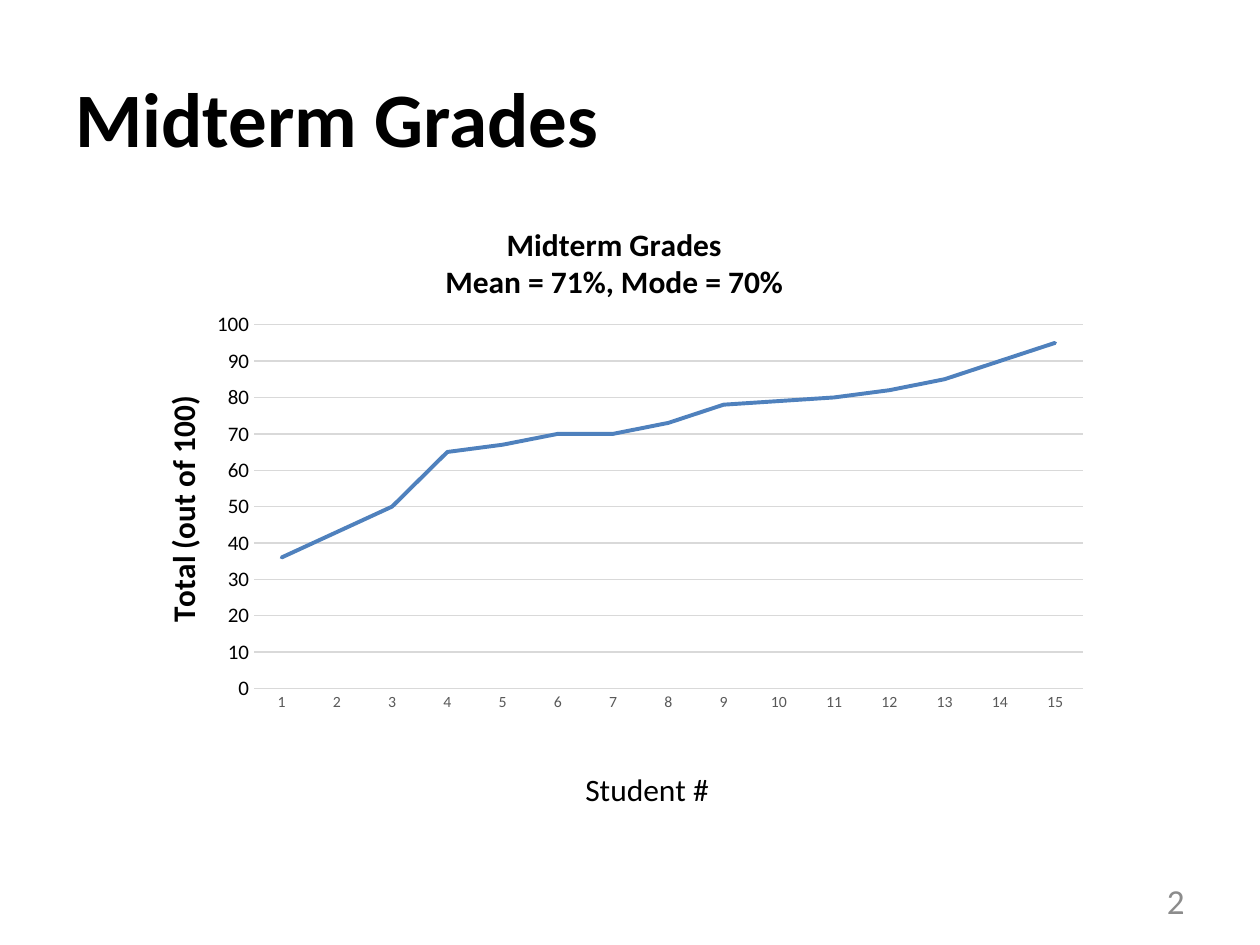
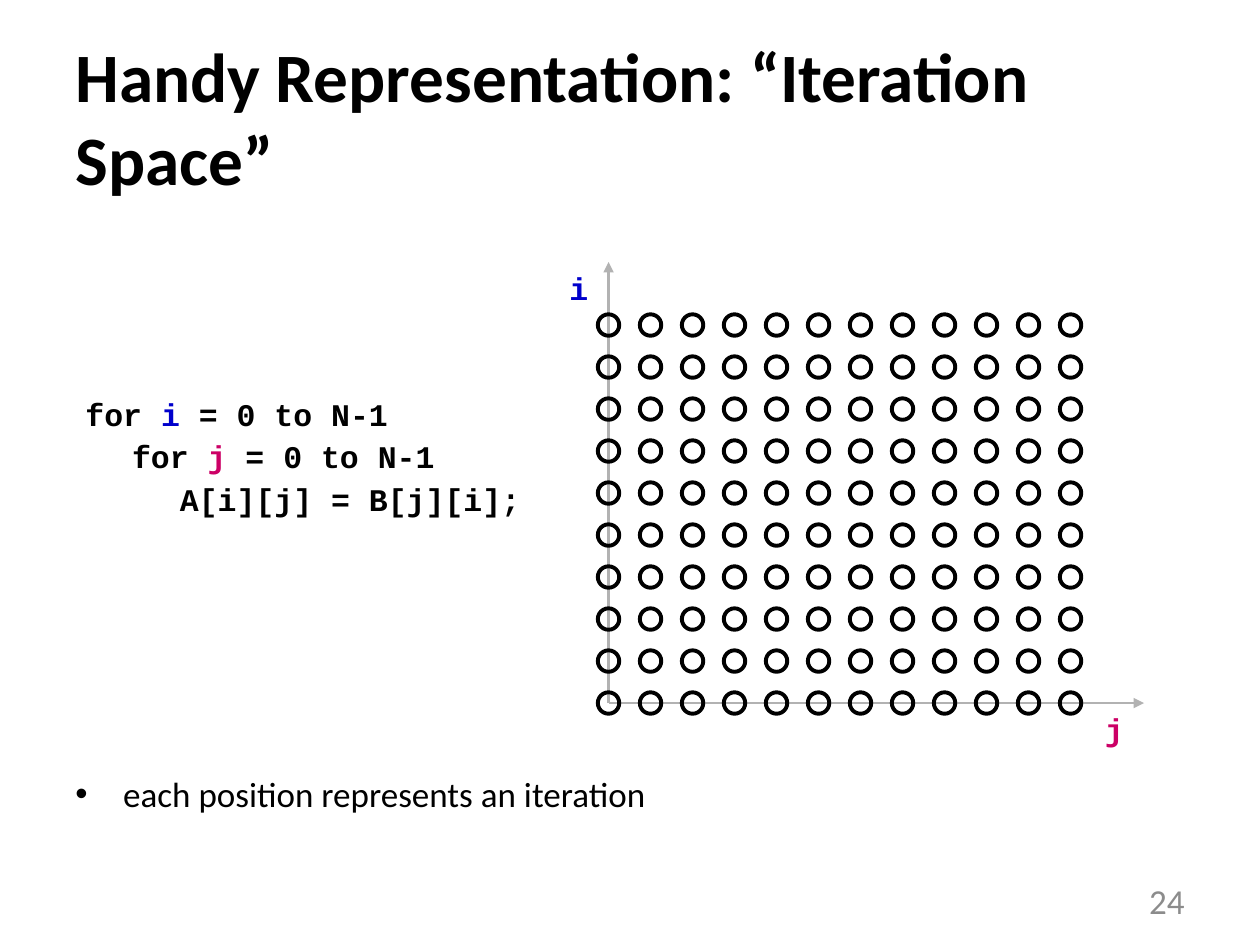
from typing import Any, NamedTuple

from lxml import etree
from pptx import Presentation
from pptx.chart.data import CategoryChartData
from pptx.dml.color import RGBColor
from pptx.enum.chart import XL_CHART_TYPE, XL_TICK_MARK
from pptx.enum.shapes import MSO_CONNECTOR, MSO_SHAPE
from pptx.enum.text import MSO_ANCHOR, PP_ALIGN
from pptx.oxml.ns import qn
from pptx.util import Inches, Pt

LINE_CHART = XL_CHART_TYPE.LINE
NO_TICK = XL_TICK_MARK.NONE
STRAIGHT = MSO_CONNECTOR.STRAIGHT
CIRCLE = MSO_SHAPE.OVAL
TOP, MIDDLE = MSO_ANCHOR.TOP, MSO_ANCHOR.MIDDLE
LEFT, RIGHT = PP_ALIGN.LEFT, PP_ALIGN.RIGHT

BODY_FONT, CODE_FONT = "Calibri", "Courier New"
BLACK, GRAY, TICK_GRAY = "000000", "8C8C8C", "595959"
GRID_GRAY, AXIS_GRAY = "D9D9D9", "B2B2B2"
I_BLUE, J_PINK, SERIES_BLUE = "0000CC", "CC0066", "4F81BD"

GRADES = (36, 43, 50, 65, 67, 70, 70, 73, 78, 79, 80, 82, 85, 90, 95)

# Iteration space: origin, pitch and size of the grid of circles
ORIGIN_X, ORIGIN_Y = 4.83, 5.58
STEP = 1 / 3
COLUMNS, ROWS = 12, 10
DIAMETER = 0.17


class Box(NamedTuple):
    left: float
    top: float
    width: float
    height: float

    def lengths(self) -> list[int]:
        return [Inches(value) for value in self]


class Style(NamedTuple):
    size: float
    color: str = BLACK
    bold: bool = False
    name: str = BODY_FONT


class Span(NamedTuple):
    text: str
    style: Style


class Para(NamedTuple):
    spans: list[Span]
    indent: float = 0
    align: Any = LEFT
    line_spacing: float = 1.0
    before: int = 0  # percent of the line
    bullet: str = ""


class AxisLook(NamedTuple):
    axis: Any
    title: str
    title_style: Style
    tick_style: Style
    place: tuple[float, float]


TITLE_BOX = Box(0.5, 0.3, 9, 1.25)
NUMBER_BOX = Box(7.17, 6.95, 2.33, 0.4)
NUMBER = Style(20, GRAY)
CODE = Style(18, BLACK, True, CODE_FONT)
CODE_I = CODE._replace(color=I_BLUE)
CODE_J = CODE._replace(color=J_PINK)
CHART_TITLE = Style(18, BLACK, True)


def rgb(color: str) -> RGBColor:
    return RGBColor.from_string(color)


def set_values(target: Any, values: dict[str, Any]) -> None:
    for name, value in values.items():
        setattr(target, name, value)


def set_font(font: Any, style: Style) -> None:
    set_values(font, {"size": Pt(style.size), "bold": style.bold, "name": style.name})
    font.color.rgb = rgb(style.color)


def set_line(line: Any, color: str, width: float) -> None:
    line.color.rgb = rgb(color)
    line.width = Pt(width)


def add_spans(paragraph: Any, spans: list[Span]) -> None:
    for span in spans:
        run = paragraph.add_run()
        run.text = span.text
        set_font(run.font, span.style)


def add_text(shapes: Any, box: Box, paras: list[Para], anchor: Any = TOP) -> None:
    frame = shapes.add_textbox(*box.lengths()).text_frame
    set_values(frame, {"word_wrap": True, "vertical_anchor": anchor})
    for index, para in enumerate(paras):
        paragraph = frame.add_paragraph() if index else frame.paragraphs[0]
        set_values(paragraph, {"alignment": para.align, "line_spacing": para.line_spacing})
        add_spans(paragraph, para.spans)
        properties = paragraph._p.get_or_add_pPr()
        properties.set("marL", str(Inches(para.indent)))
        before = etree.SubElement(properties, qn("a:spcBef"))
        etree.SubElement(before, qn("a:spcPct"), val=str(para.before * 1000))
        if para.bullet:
            properties.set("indent", str(-Inches(para.indent)))
            etree.SubElement(properties, qn("a:buFont"), typeface="Arial")
            etree.SubElement(properties, qn("a:buChar"), char=para.bullet)


def code_line(spans: list[Span], indent: float = 0) -> Para:
    return Para(spans, indent, line_spacing=0.7, before=50)


def add_page(deck: Any, title: str, title_size: float, number: str) -> Any:
    """Blank page with the shared title and page number."""
    page = deck.slides.add_slide(deck.slide_layouts[6])
    add_text(page.shapes, TITLE_BOX,
             [Para([Span(title, Style(title_size, bold=True))])], MIDDLE)
    add_text(page.shapes, NUMBER_BOX,
             [Para([Span(number, NUMBER)], align=RIGHT)], MIDDLE)
    return page


def add_arrow(shapes: Any, end_x: float, end_y: float) -> None:
    """Axis arrow from the origin of the iteration space."""
    points = [Inches(value) for value in (ORIGIN_X, ORIGIN_Y, end_x, end_y)]
    arrow = shapes.add_connector(STRAIGHT, *points)
    set_line(arrow.line, AXIS_GRAY, 1.5)
    etree.SubElement(arrow.line._get_or_add_ln(), qn("a:tailEnd"), type="triangle")
    etree.SubElement(arrow._element.spPr, qn("a:effectLst"))


def place_part(element: Any, index: int, values: dict[str, float], inner: bool = False) -> None:
    """Give a chart part a fixed place, in fractions of the chart."""
    for old in element.findall(qn("c:layout")):
        element.remove(old)
    layout = etree.Element(qn("c:layout"))
    element.insert(index, layout)
    manual = etree.SubElement(layout, qn("c:manualLayout"))
    if inner:
        etree.SubElement(manual, qn("c:layoutTarget"), val="inner")
    for side in ("x", "y"):
        etree.SubElement(manual, qn(f"c:{side}Mode"), val="edge")
    for name, value in values.items():
        etree.SubElement(manual, qn(f"c:{name}"), val=str(value))


def set_title(title: Any, lines: list[str], style: Style, place: tuple[float, float]) -> None:
    frame = title.text_frame
    for index, line in enumerate(lines):
        paragraph = frame.add_paragraph() if index else frame.paragraphs[0]
        add_spans(paragraph, [Span(line, style)])
    place_part(title._element, 1, dict(zip("xy", place)))


def add_grades_chart(page: Any) -> None:
    data = CategoryChartData()
    data.categories = [str(student + 1) for student in range(len(GRADES))]
    data.add_series("Series 1", GRADES)
    box = Box(0.92, 1.55, 7.83, 4.95)
    chart = page.shapes.add_chart(LINE_CHART, *box.lengths(), data).chart
    chart.has_legend = False
    set_font(chart.font, Style(10))
    set_title(chart.chart_title, ["Midterm Grades", "Mean = 71%, Mode = 70%"],
              CHART_TITLE, (0.33, 0.04))

    # Axes
    students, totals = chart.category_axis, chart.value_axis
    looks = [
        AxisLook(students, "Student #", Style(18), Style(9, TICK_GRAY), (0.47, 0.92)),
        AxisLook(totals, "Total (out of 100)", CHART_TITLE, Style(12), (0.04, 0.32)),
    ]
    for look in looks:
        set_values(look.axis, {"major_tick_mark": NO_TICK, "minor_tick_mark": NO_TICK})
        set_font(look.axis.tick_labels.font, look.tick_style)
        set_title(look.axis.axis_title, [look.title], look.title_style, look.place)
    set_line(students.format.line, GRID_GRAY, 0.75)
    set_values(totals, {"minimum_scale": 0, "maximum_scale": 100, "major_unit": 10})
    totals.format.line.fill.background()
    set_line(totals.major_gridlines.format.line, GRID_GRAY, 0.75)
    turned = totals.axis_title.text_frame._txBody.bodyPr
    turned.set("rot", "-5400000")
    turned.set("vert", "horz")

    # Series and plot area
    plot = chart.plots[0]
    plot.vary_by_categories = False
    series = plot.series[0]
    series.smooth = False
    set_line(series.format.line, SERIES_BLUE, 2.25)
    series.format.line._get_or_add_ln().set("cap", "rnd")
    area = chart._chartSpace.find(".//" + qn("c:plotArea"))
    place_part(area, 0, {"x": 0.14, "y": 0.21, "w": 0.84, "h": 0.59}, inner=True)


def add_iteration_space(page: Any) -> None:
    shapes = page.shapes.add_group_shape().shapes
    add_arrow(shapes, ORIGIN_X, ORIGIN_Y - 3.5)
    add_arrow(shapes, ORIGIN_X + 4.25, ORIGIN_Y)
    add_text(shapes, Box(4.42, 2.17, 0.33, 0.31), [code_line([Span("i", CODE_I)])])
    add_text(shapes, Box(8.67, 5.67, 0.33, 0.31), [code_line([Span("j", CODE_J)])])
    for row in range(ROWS):
        for column in range(COLUMNS):
            box = Box(ORIGIN_X + column * STEP - DIAMETER / 2,
                      ORIGIN_Y - row * STEP - DIAMETER / 2, DIAMETER, DIAMETER)
            circle = shapes.add_shape(CIRCLE, *box.lengths())
            circle.shadow.inherit = False
            circle.fill.background()
            set_line(circle.line, BLACK, 2.25)


def main() -> None:
    deck = Presentation()
    set_values(deck, {"slide_width": Inches(10), "slide_height": Inches(7.5)})

    # Midterm grades
    add_grades_chart(add_page(deck, "Midterm Grades", 44, "2"))

    # Iteration space
    page = add_page(deck, "Handy Representation: “Iteration Space”", 39.6, "24")
    bullet = Para([Span("each position represents an iteration", Style(20))],
                  0.38, before=20, bullet="•")
    add_text(page.shapes, Box(0.5, 6.08, 8.94, 0.71), [bullet])
    bounds = Span(" = 0 to N-1", CODE)
    add_text(page.shapes, Box(0.58, 3.17, 3.67, 1.03), [
        code_line([Span("for ", CODE), Span("i", CODE_I), bounds]),
        code_line([Span("for ", CODE), Span("j", CODE_J), bounds], 0.37),
        code_line([Span("A[i][j] = B[j][i];", CODE)], 0.75),
    ])
    add_iteration_space(page)

    deck.save("out.pptx")


if __name__ == "__main__":
    main()
